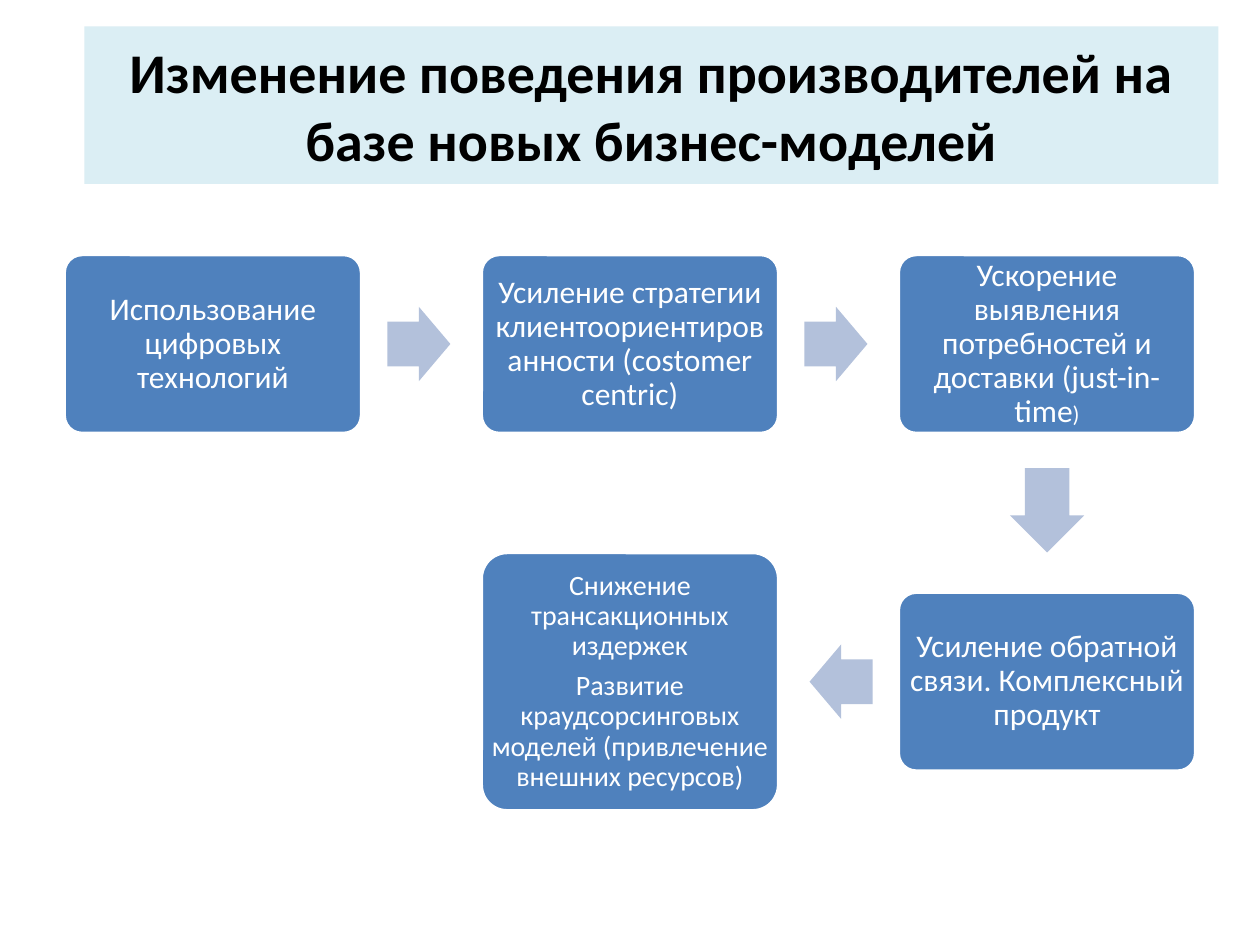
import math

import pptx
import pptx.dml.color
import pptx.enum.shapes
import pptx.enum.text
import pptx.util

Inch = pptx.util.Inches
Pt = pptx.util.Pt
SHAPE = pptx.enum.shapes.MSO_SHAPE
MIDDLE = pptx.enum.text.MSO_ANCHOR.MIDDLE
CENTER = pptx.enum.text.PP_ALIGN.CENTER

WIDE, HIGH = 2.36, 1.42
TALL = 2.05
COL, ROW = 3.31, 2.68
INSET = 0.07
CURVE = 0.1
LAG = 0.02

STEPS = [
    (0, 0, HIGH, 18, [["Использование цифровых технологий"]]),
    (1, 0, HIGH, 18, [["Усиление стратегии клиентоориентированности (costomer centric)"]]),
    (2, 0, HIGH, 18, [["Ускорение выявления потребностей и доставки (just-in-time", ")"]]),
    (2, 1, HIGH, 18, [["Усиление обратной связи. Комплексный продукт"]]),
    (1, 1, TALL, 16, [
        ["Снижение трансакционных издержек"],
        ["Развитие краудсорсинговых моделей (привлечение внешних ресурсов)"],
    ]),
]


def paint(part, code):
    """Set a fill or font colour from a hex string."""
    color = pptx.dml.color.RGBColor.from_string(code)
    if hasattr(part, "solid"):
        part.solid()
        part.fore_color.rgb = color
    else:
        part.color.rgb = color


def style(para, size, code, bold=False):
    """Format a centred paragraph."""
    para.alignment = CENTER
    para.font.name = "Calibri"
    para.font.size = Pt(size)
    para.font.bold = bold
    paint(para.font, code)


def head(slide, left, top, wide, high):
    """Place the title band in the given box."""
    title = slide.shapes.title
    title.left, title.top, title.width, title.height = map(Inch, (left, top, wide, high))
    paint(title.fill, "DBEEF4")
    frame = title.text_frame
    frame.text = "Изменение поведения производителей на базе новых бизнес-моделей"
    frame.vertical_anchor = MIDDLE
    style(frame.paragraphs[0], 32, "000000", True)


def card(slide, x, y, high, size, texts):
    """Place a rounded step centred on a point."""
    box = slide.shapes.add_shape(
        SHAPE.ROUNDED_RECTANGLE,
        *map(Inch, (x - WIDE / 2, y - high / 2, WIDE, high)))
    box.adjustments[0] = CURVE
    box.shadow.inherit = False
    paint(box.fill, "4F81BD")
    paint(box.line, "FFFFFF")
    box.line.width = Pt(2)
    frame = box.text_frame
    frame.word_wrap = True
    frame.vertical_anchor = MIDDLE
    edge = Inch(INSET - CURVE * high * (1 - math.sqrt(0.5)))
    frame.margin_left = frame.margin_right = edge
    frame.margin_top = frame.margin_bottom = edge
    for num, parts in enumerate(texts):
        para = frame.add_paragraph() if num else frame.paragraphs[0]
        style(para, size, "FFFFFF")
        para.line_spacing = 0.9
        para.space_before = Pt(0.35 * size if num else 0)
        for text in parts:
            run = para.add_run()
            run.text = text
            if text == ")":
                run.font.size = Pt(13)


def arrow(slide, start, end):
    """Point a block arrow from one step centre to the next."""
    (x1, y1), (x2, y2) = start, end
    turn = math.atan2(y2 - y1, x2 - x1)
    x = (x1 + x2) / 2 - LAG * math.cos(turn)
    y = (y1 + y2) / 2 - LAG * math.sin(turn)
    wide, high = (0.5 if y1 == y2 else 0.67), 0.59
    mark = slide.shapes.add_shape(
        SHAPE.RIGHT_ARROW, *map(Inch, (x - wide / 2, y - high / 2, wide, high)))
    mark.adjustments[0] = 0.6
    mark.adjustments[1] = 0.5
    mark.rotation = math.degrees(turn)
    mark.shadow.inherit = False
    paint(mark.fill, "B3C1DB")
    mark.line.fill.background()


def flow(slide, left, top):
    """Place the steps and their arrows from the given corner."""
    spots = [(left + WIDE / 2 + col * COL, top + HIGH / 2 + row * ROW)
             for col, row, *_ in STEPS]
    for (x, y), (_, _, high, size, texts) in zip(spots, STEPS):
        card(slide, x, y, high, size, texts)
    for start, end in zip(spots, spots[1:]):
        arrow(slide, start, end)


def main():
    """Build and save the slide."""
    deck = pptx.Presentation()
    deck.slide_width, deck.slide_height = Inch(10), Inch(7.5)
    slide = deck.slides.add_slide(deck.slide_layouts[5])
    head(slide, 0.67, 0.21, 9, 1.25)
    flow(slide, 0.51, 2.02)
    deck.save("out.pptx")


if __name__ == "__main__":
    main()
